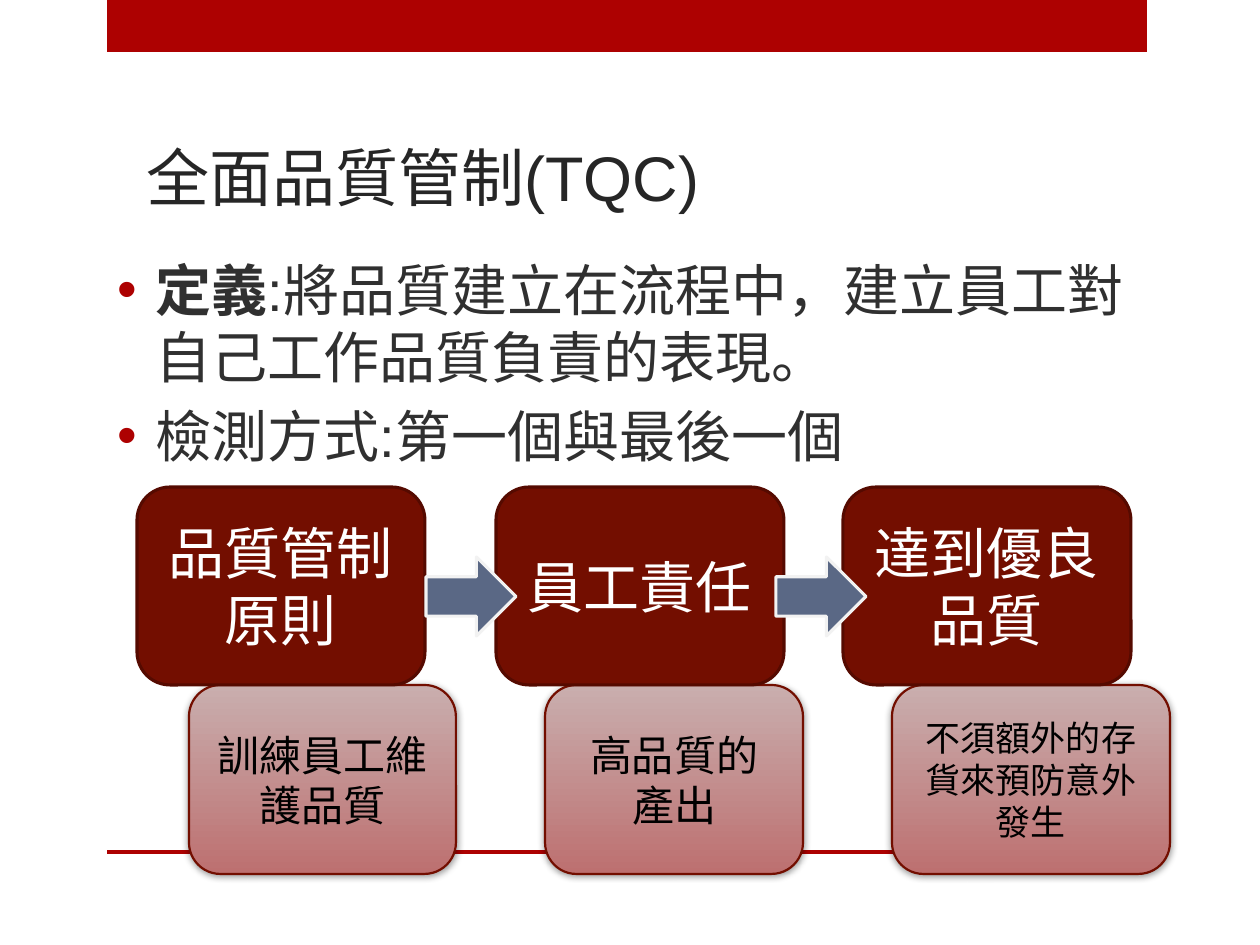
from pptx import Presentation
from pptx.dml.color import RGBColor
from pptx.enum.shapes import MSO_SHAPE as Shape
from pptx.enum.text import MSO_ANCHOR as Anchor, PP_ALIGN as Align
from pptx.oxml import parse_xml
from pptx.oxml.ns import nsdecls
from pptx.util import Emu, Pt

SCALE = 914400 / 126  # EMU per px
COLORS = {
    "red": "AD0101", "title": "262626", "body": "303030",
    "maroon": "730E00", "maroon_edge": "550A00",
    "pale_top": "C9AEAE", "pale_bottom": "BD7070",
    "arrow": "5A6885", "arrow_edge": "F2F2F2",
    "white": "FFFFFF", "black": "000000",
}

deck = Presentation()
deck.slide_width, deck.slide_height = Emu(round(1260 * SCALE)), Emu(round(945 * SCALE))
page = deck.slides.add_slide(deck.slide_layouts[6])


def add_box(kind, place, fill=None, edge=None, edge_width=1.75):
    """Add a shape, or a text box when kind is None; place is in px."""
    lengths = [Emu(round(px * SCALE)) for px in place]
    if kind is None:
        return page.shapes.add_textbox(*lengths)
    box = page.shapes.add_shape(kind, *lengths)
    box.shadow.inherit = False
    if fill:
        box.fill.solid()
        box.fill.fore_color.rgb = RGBColor.from_string(COLORS[fill])
    if edge:
        box.line.color.rgb = RGBColor.from_string(COLORS[edge])
        box.line.width = Pt(edge_width)
    else:
        box.line.fill.background()
    return box


def write(box, paragraphs, size, color, font="Arial", align=Align.LEFT,
          anchor=Anchor.MIDDLE, bullet=False):
    """Fill a box with paragraphs, each a list of (text, bold) spans."""
    frame = box.text_frame
    frame.word_wrap = True
    frame.vertical_anchor = anchor
    for index, spans in enumerate(paragraphs):
        para = frame.add_paragraph() if index else frame.paragraphs[0]
        para.alignment = align
        for text, bold in spans:
            span = para.add_run()
            span.text = text
            span.font.name, span.font.size, span.font.bold = font, Pt(size), bold
            span.font.color.rgb = RGBColor.from_string(COLORS[color])
        if bullet:
            para.space_before = Pt(size * 0.2)
            props = para._p.get_or_add_pPr()
            indent = round(38 * SCALE)
            props.set("marL", str(indent))
            props.set("indent", str(-indent))
            props.append(parse_xml(
                f'<a:buClr {nsdecls("a")}><a:srgbClr val="{COLORS["red"]}"/></a:buClr>'))
            props.append(parse_xml(f'<a:buFont {nsdecls("a")} typeface="Arial"/>'))
            props.append(parse_xml(f'<a:buChar {nsdecls("a")} char="•"/>'))


# Top band and bottom rule
add_box(Shape.RECTANGLE, (107, 0, 1040, 52), "red")
add_box(Shape.RECTANGLE, (107, 850, 1040, 4), "red")

# Title and definition
write(add_box(None, (134, 0, 935, 220)), [[("全面品質管制(TQC)", False)]],
      36, "title", anchor=Anchor.BOTTOM)
write(add_box(None, (105, 94, 1040, 536)), [
    [("定義", True), (":將品質建立在流程中，建立員工對自己工作品質負責的表現。", False)],
    [("檢測方式:第一個與最後一個", False)],
], 32, "body", bullet=True)

# Result boxes: left, width, text size, lines
results = [
    (189, 267, 24, ["訓練員工維護品質"]),
    (545, 258, 24, ["高品質的", "產出"]),
    (892, 278, 20, ["不須額外的存貨來預防意外發生"]),
]
for left, width, size, lines in results:
    box = add_box(Shape.ROUNDED_RECTANGLE, (left, 685, width, 189),
                  edge="maroon", edge_width=1.25)
    box.fill.gradient()
    box.fill.gradient_angle = 270
    for stop, name in zip(box.fill.gradient_stops, ("pale_top", "pale_bottom")):
        stop.color.rgb = RGBColor.from_string(COLORS[name])
    box._element.spPr.find("{*}effectLst").append(parse_xml(
        f'<a:outerShdw {nsdecls("a")} blurRad="50800" dist="12700" dir="5280000">'
        '<a:srgbClr val="000000"><a:alpha val="40000"/></a:srgbClr></a:outerShdw>'))
    write(box, [[(line, False)] for line in lines], size, "black",
          font="Times New Roman", align=Align.CENTER)

# Step boxes
for left, text in [(137, "品質管制原則"), (496, "員工責任"), (843, "達到優良品質")]:
    box = add_box(Shape.ROUNDED_RECTANGLE, (left, 487, 288, 198), "maroon", "maroon_edge")
    write(box, [[(text, False)]], 32, "white",
          font="Times New Roman", align=Align.CENTER)

# Arrows between the steps
for left in (426, 776):
    add_box(Shape.RIGHT_ARROW, (left, 557, 90, 79), "arrow", "arrow_edge")

deck.save("out.pptx")
